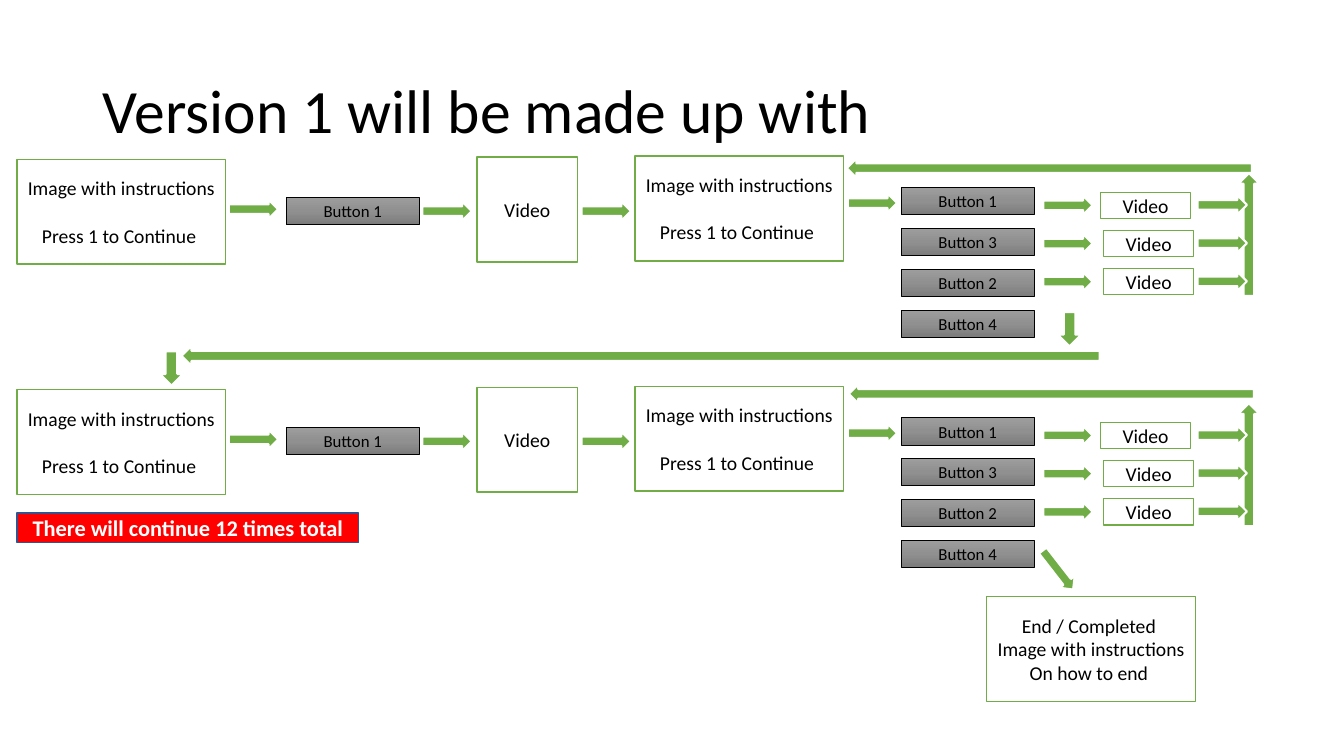
from copy import deepcopy
from dataclasses import dataclass

from pptx import Presentation
from pptx.dml.color import RGBColor
from pptx.enum.shapes import MSO_SHAPE
from pptx.enum.text import MSO_ANCHOR, PP_ALIGN
from pptx.oxml.ns import qn
from pptx.shapes.autoshape import Shape
from pptx.slide import Slide
from pptx.util import Pt

RECTANGLE = MSO_SHAPE.RECTANGLE
RIGHT_ARROW = MSO_SHAPE.RIGHT_ARROW
CENTER, LEFT = PP_ALIGN.CENTER, PP_ALIGN.LEFT
MIDDLE = MSO_ANCHOR.MIDDLE

FONT = "Calibri"
COLORS = {
    "black": "000000",
    "white": "FFFFFF",
    "green": "70AD47",
    "red": "FF0000",
    "navy": "325491",
    "button_top": "9D9D9D",
    "button_middle": "909090",
    "button_bottom": "7C7C7C",
}
BUTTON_GRADIENT = ((0, "button_top"), (0.5, "button_middle"), (1, "button_bottom"))

ROUND_TOPS = (0, 164.4)
BUTTON_ORDER = (1, 3, 2, 4)
BUTTON_PITCH = 29.1
ANSWER_PITCH = 27.3
INSTRUCTIONS = ("Image with instructions ", "Press 1 to Continue ")
ENDING = ("End / Completed ", "Image with instructions ", "On how to end ")


@dataclass(frozen=True)
class BoxStyle:
    width: float
    height: float
    fill: str | None  # None means the button gradient
    line: str = "green"
    line_width: float = 1
    size: float = 14
    color: str = "black"
    bold: bool = False
    paragraph_gap: float = 0


@dataclass(frozen=True)
class Box:
    left: float
    top: float
    lines: tuple[str, ...]
    style: BoxStyle


@dataclass(frozen=True)
class Arrow:
    left: float
    top: float
    width: float = 35.3
    height: float = 13.7
    rotation: float = 0


INSTRUCTION = BoxStyle(149, 74.9, "white", paragraph_gap=17)
END = BoxStyle(149, 74.9, "white")
VIDEO = BoxStyle(72, 74.9, "white")
ANSWER_VIDEO = BoxStyle(64.2, 18.7, "white")
BUTTON = BoxStyle(95, 19.4, None, "black", 0.5, 12)
NOTE = BoxStyle(244.1, 20.9, "red", "navy", 1, 16, "white", True)


def rgb(name: str) -> RGBColor:
    return RGBColor.from_string(COLORS[name])


def fill_button(shape: Shape) -> None:
    """Apply the three-stop vertical gradient."""
    shape.fill.gradient()
    stop_list = shape.element.spPr.find(".//" + qn("a:gsLst"))
    stop_list.append(deepcopy(stop_list[0]))
    for stop, (position, color) in zip(shape.fill.gradient_stops, BUTTON_GRADIENT):
        stop.position = position
        stop.color.rgb = rgb(color)
    shape.fill.gradient_angle = 270


def draw_box(slide: Slide, box: Box) -> None:
    style = box.style
    shape = slide.shapes.add_shape(
        RECTANGLE, Pt(box.left), Pt(box.top), Pt(style.width), Pt(style.height))
    shape.shadow.inherit = False
    if style.fill is None:
        fill_button(shape)
    else:
        shape.fill.solid()
        shape.fill.fore_color.rgb = rgb(style.fill)
    shape.line.color.rgb = rgb(style.line)
    shape.line.width = Pt(style.line_width)
    frame = shape.text_frame
    frame.word_wrap = True
    frame.vertical_anchor = MIDDLE
    for index, line in enumerate(box.lines):
        paragraph = frame.add_paragraph() if index else frame.paragraphs[0]
        paragraph.alignment = CENTER
        if index:
            paragraph.space_before = Pt(style.paragraph_gap)
        run = paragraph.add_run()
        run.text = line
        run.font.name = FONT
        run.font.size = Pt(style.size)
        run.font.bold = style.bold
        run.font.color.rgb = rgb(style.color)


def draw_arrow(slide: Slide, arrow: Arrow) -> None:
    shape = slide.shapes.add_shape(
        RIGHT_ARROW, Pt(arrow.left), Pt(arrow.top), Pt(arrow.width), Pt(arrow.height))
    shape.shadow.inherit = False
    shape.rotation = arrow.rotation
    shape.fill.solid()
    shape.fill.fore_color.rgb = rgb("green")
    shape.line.color.rgb = rgb("white")
    shape.line.width = Pt(1.5)


def draw_round(slide: Slide, top: float) -> None:
    """Draw one instruction, video and answer sequence, shifted down by top."""
    boxes = [
        Box(12.2, top + 113.8, INSTRUCTIONS, INSTRUCTION),
        Box(204.5, top + 141.1, ("Button 1",), BUTTON),
        Box(340.6, top + 112.2, ("Video",), VIDEO),
        Box(453.6, top + 111.5, INSTRUCTIONS, INSTRUCTION),
    ]
    for index, number in enumerate(BUTTON_ORDER):
        button_top = top + 134.1 + index * BUTTON_PITCH
        boxes.append(Box(643.7, button_top, (f"Button {number}",), BUTTON))

    arrows = [
        Arrow(163.4, top + 142.6),
        Arrow(301.7, top + 144),
        Arrow(415.4, top + 144),
        Arrow(605.5, top + 138.2),
        Arrow(848.2, top + 160, 87.8, 15.1, 270),
    ]
    for index in range(3):
        offset = top + index * ANSWER_PITCH
        boxes.append(Box(788.4 if index else 786.2, offset + 137.3, ("Video",), ANSWER_VIDEO))
        arrows.append(Arrow(745.2, offset + 139.8))
        arrows.append(Arrow(855.4, offset + 139.5))

    for box in boxes:
        draw_box(slide, box)
    for arrow in arrows:
        draw_arrow(slide, arrow)


def write_title(slide: Slide) -> None:
    title = slide.shapes.title
    title.left, title.top, title.width, title.height = Pt(66.2), Pt(28.8), Pt(828), Pt(104.4)
    title.text_frame.word_wrap = True
    title.text_frame.vertical_anchor = MIDDLE
    paragraph = title.text_frame.paragraphs[0]
    paragraph.alignment = LEFT
    paragraph.line_spacing = 0.9
    run = paragraph.add_run()
    run.text = "Version 1 will be made up with"
    run.font.name = FONT
    run.font.size = Pt(44)
    run.font.color.rgb = rgb("black")


def main() -> None:
    presentation = Presentation()
    presentation.slide_width, presentation.slide_height = Pt(960), Pt(540)
    slide = presentation.slides.add_slide(presentation.slide_layouts[5])
    write_title(slide)
    for top in ROUND_TOPS:
        draw_round(slide, top)

    links = (
        Arrow(604.8, 113.2, 289.4, rotation=180),
        Arrow(606.2, 274.5, 289.4, rotation=180),
        Arrow(751.7, 226.8, 24.5, 16.6, 90),
        Arrow(129.6, 247, 655.9, 14.4, 180),
        Arrow(110.2, 254.9, 24.5, 16.6, 90),
        Arrow(738, 400.3, rotation=52.1),
    )
    for link in links:
        draw_arrow(slide, link)
    draw_box(slide, Box(12.2, 366.5, ("There will continue 12 times total",), NOTE))
    draw_box(slide, Box(704.9, 426.2, ENDING, END))
    presentation.save("out.pptx")


if __name__ == "__main__":
    main()
